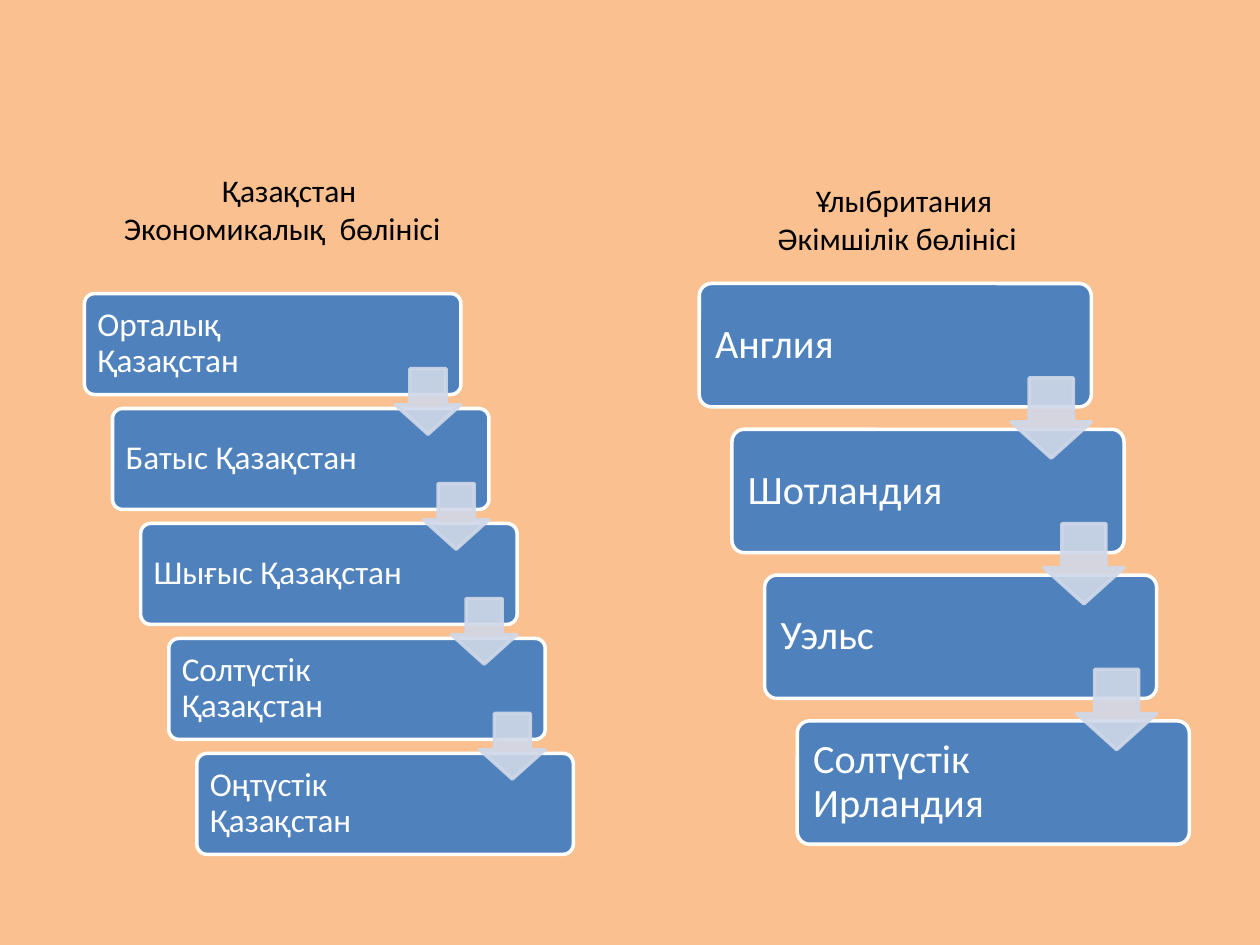
"""Build a slide with two descending staircases of regions."""
from dataclasses import dataclass

from lxml.etree import SubElement
from pptx import Presentation
from pptx.dml.color import RGBColor
from pptx.enum.shapes import MSO_SHAPE
from pptx.enum.text import MSO_ANCHOR, MSO_AUTO_SIZE, PP_ALIGN
from pptx.oxml.ns import qn
from pptx.util import Inches, Pt

SLIDE_WIDTH, SLIDE_HEIGHT = Inches(10), Inches(7.5)
COLUMN, ROW = SLIDE_WIDTH / 100, SLIDE_HEIGHT / 75


@dataclass(frozen=True)
class Theme:
    """Hold the colours and type sizes of the slide."""
    font: str = "Calibri"
    background: str = "FAC090"
    card: str = "4F81BD"
    card_text: str = "FFFFFF"
    card_line: str = "FFFFFF"
    arrow: str = "D0D8E8"
    arrow_opacity: int = 90
    heading_text: str = "000000"
    heading_size: int = 18
    line_width: int = 2


@dataclass(frozen=True)
class Staircase:
    """Describe a staircase by its frame in grid units and its card shares."""
    regions: tuple
    left: float
    top: float
    width: float
    height: float
    card_width: float
    card_height: float
    text_size: int
    padding: float
    text_end: float


THEME = Theme()

KAZAKHSTAN = Staircase(
    ("Орталық Қазақстан", "Батыс Қазақстан", "Шығыс Қазақстан",
     "Солтүстік Қазақстан", "Оңтүстік Қазақстан"),
    left=6.7, top=23.3, width=38.8, height=44.5,
    card_width=0.77, card_height=0.18, text_size=19, padding=0.8, text_end=8.5)

BRITAIN = Staircase(
    ("Англия", "Шотландия", "Уэльс", "Солтүстік Ирландия"),
    left=55.5, top=22.5, width=38.9, height=44.5,
    card_width=0.8, card_height=0.22, text_size=23, padding=1, text_end=9)


def set_opacity(fill, percent):
    """Make a solid fill partly transparent."""
    color = fill._xPr.find(qn("a:solidFill"))[0]
    SubElement(color, qn("a:alpha"), val=str(percent * 1000))


def add_run(paragraph, text, size, color):
    """Add one formatted run to a paragraph."""
    run = paragraph.add_run()
    run.text = text
    run.font.name = THEME.font
    run.font.size = Pt(size)
    run.font.color.rgb = RGBColor.from_string(color)


def add_block(shapes, kind, left, top, width, height, fill, line):
    """Add a flat preset shape placed in grid units."""
    shape = shapes.add_shape(
        kind, round(left * COLUMN), round(top * ROW),
        round(width * COLUMN), round(height * ROW))
    shape.shadow.inherit = False
    shape.fill.solid()
    shape.fill.fore_color.rgb = RGBColor.from_string(fill)
    shape.line.color.rgb = RGBColor.from_string(line)
    shape.line.width = Pt(THEME.line_width)
    return shape


def add_card(shapes, region, stairs, left, top, width, height):
    """Add a rounded card that names a region."""
    card = add_block(shapes, MSO_SHAPE.ROUNDED_RECTANGLE, left, top, width,
                     height, THEME.card, THEME.card_line)
    card.adjustments[0] = 0.1
    frame = card.text_frame
    frame.word_wrap = True
    frame.vertical_anchor = MSO_ANCHOR.MIDDLE
    frame.margin_left = round(stairs.padding * COLUMN)
    frame.margin_right = round(stairs.text_end * COLUMN)
    frame.margin_top = frame.margin_bottom = round(stairs.padding * ROW)
    paragraph = frame.paragraphs[0]
    paragraph.alignment = PP_ALIGN.LEFT
    paragraph.line_spacing = 0.9
    add_run(paragraph, region, stairs.text_size, THEME.card_text)


def add_arrow(shapes, right, middle, size):
    """Add a translucent down arrow by its right edge and middle."""
    arrow = add_block(shapes, MSO_SHAPE.DOWN_ARROW, right - size,
                      middle - size / 2, size, size, THEME.arrow, THEME.arrow)
    arrow.adjustments[0] = 0.55
    arrow.adjustments[1] = 0.45
    set_opacity(arrow.fill, THEME.arrow_opacity)
    set_opacity(arrow.line.fill, THEME.arrow_opacity)


def add_staircase(slide, stairs):
    """Add a group of stepped cards with arrows over the gaps."""
    shapes = slide.shapes.add_group_shape().shapes
    width = stairs.width * stairs.card_width
    height = stairs.height * stairs.card_height
    steps = len(stairs.regions) - 1
    step_across = (stairs.width - width) / steps
    step_down = (stairs.height - height) / steps
    for index, region in enumerate(stairs.regions):
        add_card(shapes, region, stairs, stairs.left + index * step_across,
                 stairs.top + index * step_down, width, height)
    for index in range(steps):
        right = stairs.left + index * step_across + width
        middle = stairs.top + index * step_down + (height + step_down) / 2
        add_arrow(shapes, right, middle, 0.65 * height)


def add_heading(slide, left, top, country, division):
    """Add a centred heading whose country line is slightly indented."""
    box = slide.shapes.add_textbox(
        round(left * COLUMN), round(top * ROW),
        round(36.2 * COLUMN), round(7.1 * ROW))
    frame = box.text_frame
    frame.word_wrap = True
    frame.auto_size = MSO_AUTO_SIZE.SHAPE_TO_FIT_TEXT
    first, second = frame.paragraphs[0], frame.add_paragraph()
    first._p.get_or_add_pPr().set("marL", str(round(1.1 * COLUMN)))
    for paragraph, text in ((first, country), (second, division)):
        paragraph.alignment = PP_ALIGN.CENTER
        add_run(paragraph, text, THEME.heading_size, THEME.heading_text)


def main():
    """Build and save the presentation."""
    presentation = Presentation()
    presentation.slide_width = SLIDE_WIDTH
    presentation.slide_height = SLIDE_HEIGHT
    slide = presentation.slides.add_slide(presentation.slide_layouts[6])
    slide.background.fill.solid()
    slide.background.fill.fore_color.rgb = RGBColor.from_string(THEME.background)
    add_staircase(slide, KAZAKHSTAN)
    add_staircase(slide, BRITAIN)
    add_heading(slide, 53.1, 13.9, "Ұлыбритания", "Әкімшілік бөлінісі")
    add_heading(slide, 4.3, 13.1, "Қазақстан", "Экономикалық  бөлінісі")
    presentation.save("out.pptx")


if __name__ == "__main__":
    main()
